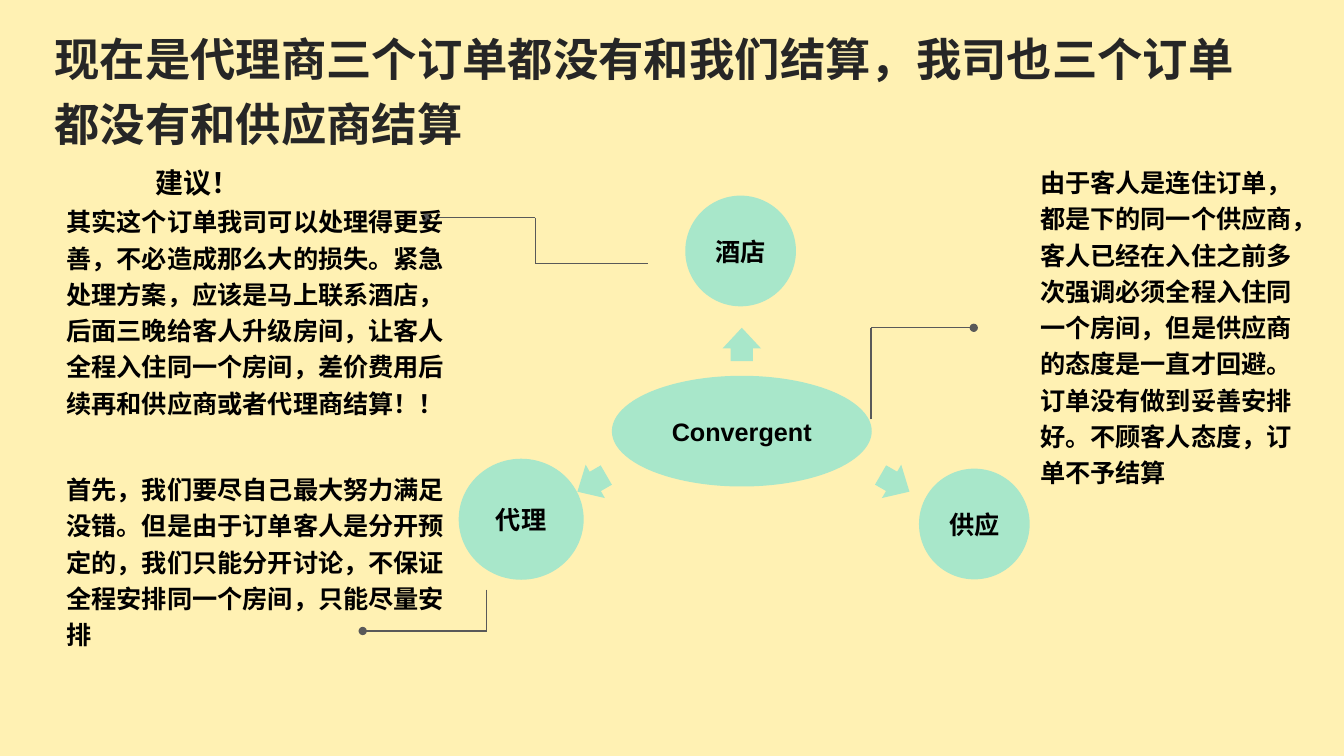
from itertools import pairwise

from lxml.etree import SubElement
from pptx import Presentation
from pptx.dml.color import RGBColor
from pptx.enum.shapes import MSO_CONNECTOR, MSO_SHAPE
from pptx.enum.text import MSO_ANCHOR, PP_ALIGN
from pptx.oxml.ns import qn
from pptx.util import Cm, Pt


def color(value):
    return RGBColor.from_string(value)


class SlideBuilder:
    """Draws styled elements on the current slide."""

    font = "Arial"
    background = "FFF1B3"
    accent = "A8E7CA"
    ink = "000000"
    title_ink = "262626"
    line = "595959"

    def __init__(self, slide):
        self.slide = slide
        fill = slide.background.fill
        fill.solid()
        fill.fore_color.rgb = color(self.background)

    def label(self, shape, content, size=18, ink=ink, align=PP_ALIGN.LEFT, spacing=None):
        text_frame = shape.text_frame
        text_frame.word_wrap = True
        text_frame.text = content
        for paragraph in text_frame.paragraphs:
            paragraph.alignment = align
            paragraph.line_spacing = spacing
            for run in paragraph.runs:
                run.font.size = Pt(size)
                run.font.bold = True
                run.font.color.rgb = color(ink)
                run.font.name = self.font
                SubElement(run.font._element, qn("a:ea"), typeface=self.font)

    def text(self, box, content, anchor=MSO_ANCHOR.TOP, **style):
        shape = self.slide.shapes.add_textbox(*map(Cm, box))
        self.label(shape, content, **style)
        shape.text_frame.vertical_anchor = anchor

    def shape(self, kind, box):
        shape = self.slide.shapes.add_shape(kind, *map(Cm, box))
        shape.shadow.inherit = False
        shape.fill.solid()
        shape.fill.fore_color.rgb = color(self.accent)
        shape.line.fill.background()
        return shape

    def ellipse(self, box, content):
        shape = self.shape(MSO_SHAPE.OVAL, box)
        self.label(shape, content, align=PP_ALIGN.CENTER)
        shape.text_frame.vertical_anchor = MSO_ANCHOR.MIDDLE

    def arrow(self, left, top, rotation):
        shape = self.shape(MSO_SHAPE.UP_ARROW, (left, top, 0.97, 0.84))
        shape.adjustments[0] = 0.58
        shape.adjustments[1] = 0.62
        shape.rotation = rotation

    def leader(self, points):
        for start, end in pairwise(points):
            connector = self.slide.shapes.add_connector(
                MSO_CONNECTOR.STRAIGHT, *map(Cm, start + end)
            )
            connector.line.color.rgb = color(self.line)
            connector.line.width = Pt(0.75)
            properties = connector._element.spPr
            SubElement(properties, qn("a:effectLst"))
        SubElement(properties.find(qn("a:ln")), qn("a:tailEnd"), type="oval")


def main():
    presentation = Presentation()
    presentation.slide_width = Cm(33.87)
    presentation.slide_height = Cm(19.05)
    builder = SlideBuilder(presentation.slides.add_slide(presentation.slide_layouts[6]))

    builder.text(
        (1.12, 0.15, 31.24, 3.78),
        "现在是代理商三个订单都没有和我们结算，我司也三个订单都没有和供应商结算",
        anchor=MSO_ANCHOR.BOTTOM, size=32.4, ink=builder.title_ink, spacing=1.2,
    )

    for box, content in (
        ((23.16, 11.81, 2.79, 2.79), "供应"),
        ((11.56, 11.56, 3.15, 3.05), "代理"),
        ((17.27, 4.93, 2.79, 2.79), "酒店"),
        ((15.42, 9.47, 6.55, 2.79), "Convergent"),
    ):
        builder.ellipse(box, content)

    for points in (
        ((16.33, 6.65), (13.49, 6.65), (13.49, 5.49), (10.74, 5.49)),
        ((12.27, 14.86), (12.27, 15.9), (9.14, 15.9)),
        ((21.95, 10.57), (21.95, 8.26), (24.54, 8.26)),
    ):
        builder.leader(points)

    builder.text((1.12, 4.04, 5.18, 1.12), "建议！", size=20, align=PP_ALIGN.RIGHT)
    for box, content in (
        ((1.42, 4.93, 10.39, 5.64),
         "其实这个订单我司可以处理得更妥善，不必造成那么大的损失。紧急处理方案，"
         "应该是马上联系酒店，后面三晚给客人升级房间，让客人全程入住同一个房间，"
         "差价费用后续再和供应商或者代理商结算！！"),
        ((1.42, 11.68, 10.16, 5.66),
         "首先，我们要尽自己最大努力满足没错。但是由于订单客人是分开预定的，"
         "我们只能分开讨论，不保证全程安排同一个房间，只能尽量安排"),
        ((25.96, 3.94, 6.86, 9.65),
         "由于客人是连住订单，都是下的同一个供应商，客人已经在入住之前多次强调"
         "必须全程入住同一个房间，但是供应商的态度是一直才回避。"
         "订单没有做到妥善安排好。不顾客人态度，订单不予结算"),
    ):
        builder.text(box, content, spacing=1.2)

    for left, top, rotation in ((14.43, 11.76, 240), (18.21, 8.26, 0), (22.07, 11.76, 120)):
        builder.arrow(left, top, rotation)

    presentation.save("out.pptx")


if __name__ == "__main__":
    main()
